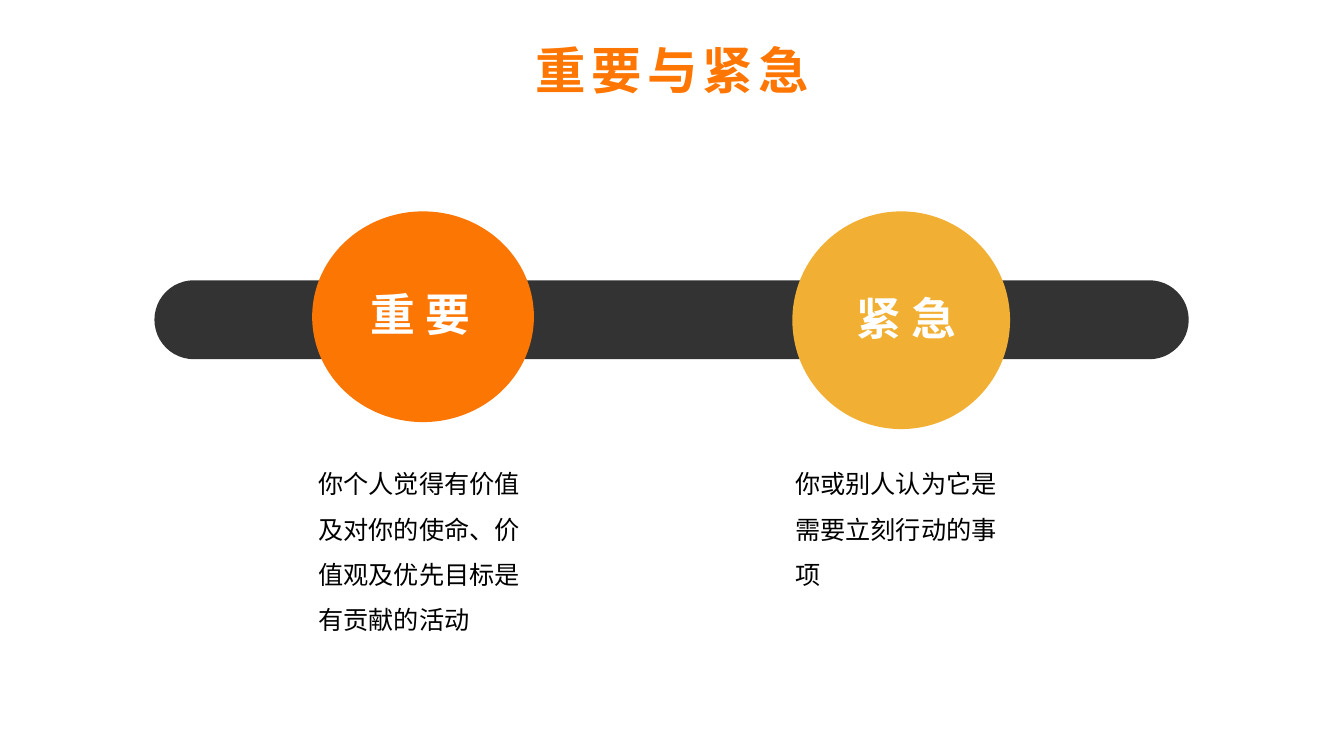
"""Build the slide that sets importance beside urgency."""
from dataclasses import dataclass

from pptx import Presentation
from pptx import util as u
from pptx.dml.color import RGBColor
from pptx.enum import shapes, text
from pptx.oxml.ns import qn
from lxml import etree

FONT = "Noto Sans CJK SC"
ORANGE = "FF7602"
HEADING_PITCH = 1.3
BODY_PITCH = 1.8


@dataclass(frozen=True)
class Box:
    left: float
    top: float
    width: float
    height: float

    def lengths(self) -> tuple:
        return tuple(u.Pt(value) for value in (self.left, self.top, self.width, self.height))


@dataclass(frozen=True)
class Style:
    size: float
    color: str
    pitch: float
    bold: bool = False
    spacing: float = 0
    align: text.PP_ALIGN = text.PP_ALIGN.LEFT


@dataclass(frozen=True)
class Concept:
    label: str
    description: str
    color: str
    circle: Box
    label_box: Box
    description_box: Box


TITLE = Style(36, ORANGE, HEADING_PITCH, True, 4, text.PP_ALIGN.CENTER)
LABEL = Style(32, "FFFFFF", HEADING_PITCH, True)
BODY = Style(18, "000000", BODY_PITCH)

CONCEPTS = (
    Concept("重 要", "你个人觉得有价值及对你的使命、价值观及优先目标是有贡献的活动", "FC7604",
            Box(223, 151, 158.4, 150.5), Box(257.8, 198, 135.4, 56.2),
            Box(220.3, 320.4, 160.6, 134.6)),
    Concept("紧 急", "你或别人认为它是需要立刻行动的事项", "F1B034",
            Box(566, 151, 155.5, 155.5), Box(604.8, 200.6, 109.4, 56.2),
            Box(560.9, 320.4, 160.6, 101.5)),
)


def rgb(color: str) -> RGBColor:
    return RGBColor.from_string(color)


def write(shape, words: str, style: Style) -> None:
    frame = shape.text_frame
    frame.word_wrap = True
    frame.vertical_anchor = text.MSO_ANCHOR.TOP
    frame.auto_size = text.MSO_AUTO_SIZE.SHAPE_TO_FIT_TEXT
    paragraph = frame.paragraphs[0]
    paragraph.alignment = style.align
    paragraph.line_spacing = u.Pt(style.size * style.pitch)
    run = paragraph.add_run()
    run.text = words
    run.font.name = FONT
    run.font.size = u.Pt(style.size)
    run.font.bold = style.bold
    run.font.color.rgb = rgb(style.color)
    properties = run.font._element
    properties.set("lang", "zh-CN")
    if style.spacing:
        properties.set("spc", str(int(style.spacing * 100)))
    east_asian = etree.Element(qn("a:ea"), typeface=FONT)
    properties.find(qn("a:latin")).addnext(east_asian)


def add_solid(container, kind: shapes.MSO_SHAPE, box: Box, color: str):
    shape = container.add_shape(kind, *box.lengths())
    shape.shadow.inherit = False
    shape.fill.solid()
    shape.fill.fore_color.rgb = rgb(color)
    shape.line.fill.background()
    return shape


def add_words(container, box: Box, words: str, style: Style) -> None:
    write(container.add_textbox(*box.lengths()), words, style)


def add_concept(slide, concept: Concept) -> None:
    group = slide.shapes.add_group_shape()
    add_solid(group.shapes, shapes.MSO_SHAPE.OVAL, concept.circle, concept.color)
    add_words(group.shapes, concept.label_box, concept.label, LABEL)
    add_words(slide.shapes, concept.description_box, concept.description, BODY)


def main() -> None:
    presentation = Presentation()
    presentation.slide_width = u.Pt(960)
    presentation.slide_height = u.Pt(540)
    slide = presentation.slides.add_slide(presentation.slide_layouts[5])
    title = slide.shapes.title
    title.left, title.top, title.width, title.height = Box(173.5, 21, 613.5, 51).lengths()
    write(title, "重要与紧急", TITLE)
    bar_box = Box(110.3, 200.2, 738.8, 56.4)
    bar = add_solid(slide.shapes, shapes.MSO_SHAPE.ROUNDED_RECTANGLE, bar_box, "333333")
    bar.adjustments[0] = 0.5
    for concept in CONCEPTS:
        add_concept(slide, concept)
    presentation.save("out.pptx")


if __name__ == "__main__":
    main()
